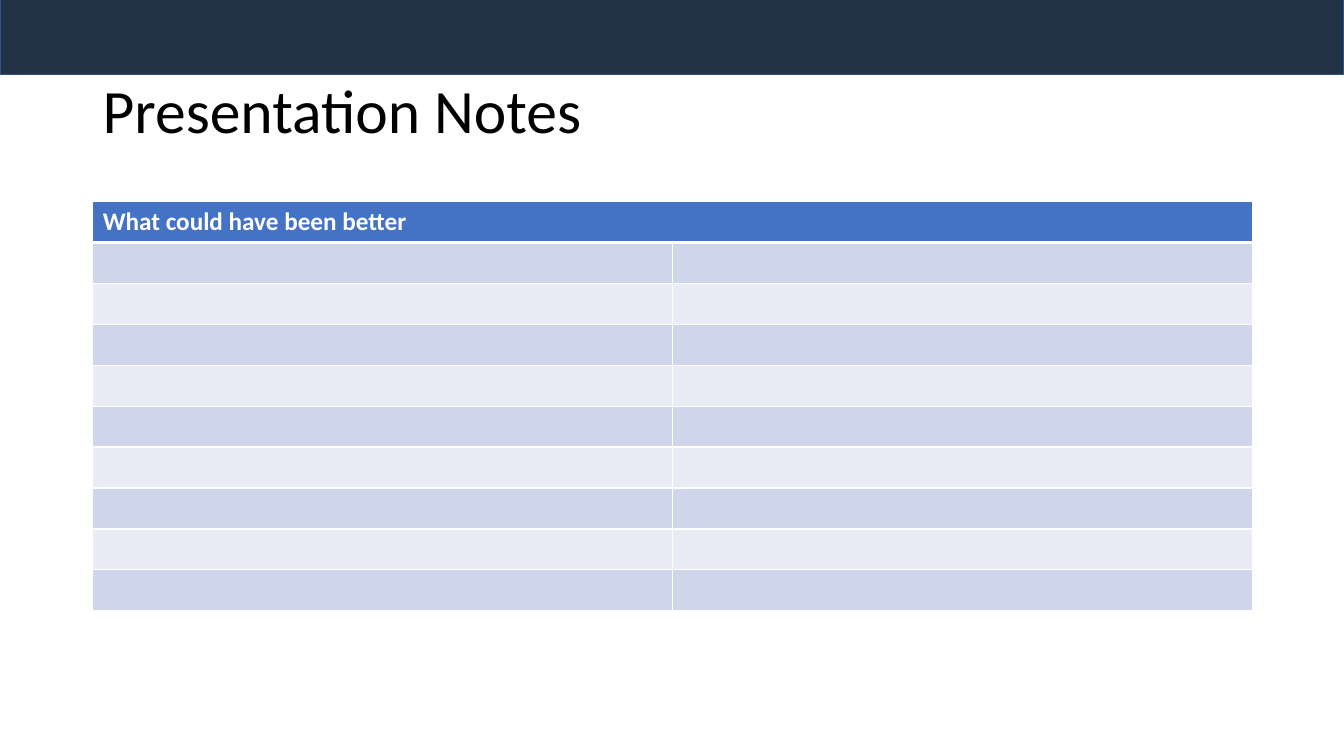
from dataclasses import dataclass

from lxml import etree
from pptx import Presentation
from pptx.dml.color import RGBColor
from pptx.enum.shapes import MSO_SHAPE
from pptx.enum.text import MSO_ANCHOR
from pptx.oxml.ns import qn
from pptx.slide import Slide
from pptx.table import _Cell
from pptx.text.text import TextFrame
from pptx.util import Inches, Pt

RECT = MSO_SHAPE.RECTANGLE
TOP = MSO_ANCHOR.TOP
MIDDLE = MSO_ANCHOR.MIDDLE

BLACK = RGBColor(0x00, 0x00, 0x00)
WHITE = RGBColor(0xFF, 0xFF, 0xFF)
NAVY = RGBColor(0x22, 0x33, 0x46)
EDGE = RGBColor(0x32, 0x54, 0x91)
BLUE = RGBColor(0x44, 0x72, 0xC4)
DARK = RGBColor(0xCF, 0xD5, 0xEA)
PALE = RGBColor(0xE9, 0xEB, 0xF5)

FONT = "Calibri"
WIDE = 13.33
LEFT = 0.92
SPAN = 11.5
COLS = 2
ROWS = 10
DEEP = 4.06


@dataclass(frozen=True)
class Row:
    fill: RGBColor
    above: float = 1
    below: float = 1


def write(frame: TextFrame, text: str, *, size: float, color: RGBColor,
          bold: bool = False, anchor: MSO_ANCHOR = TOP, space: float = 1.0) -> None:
    frame.word_wrap = True
    frame.vertical_anchor = anchor
    line = frame.paragraphs[0]
    line.line_spacing = space
    run = line.add_run()
    run.text = text
    run.font.name = FONT
    run.font.size = Pt(size)
    run.font.bold = bold
    run.font.color.rgb = color


def draw_bar(slide: Slide) -> None:
    bar = slide.shapes.add_shape(
        RECT, Inches(0), Inches(-0.04), Inches(WIDE), Inches(0.78))
    bar.shadow.inherit = False
    bar.fill.solid()
    bar.fill.fore_color.rgb = NAVY
    bar.line.color.rgb = EDGE
    bar.line.width = Pt(1)


def draw_title(slide: Slide) -> None:
    box = slide.shapes.add_textbox(
        Inches(LEFT), Inches(0.4), Inches(SPAN), Inches(1.45))
    write(box.text_frame, "Presentation Notes", size=44, color=BLACK,
          anchor=MIDDLE, space=0.9)


def style_cell(cell: _Cell, row: Row) -> None:
    props = cell._tc.get_or_add_tcPr()
    sides = {"a:lnL": 1, "a:lnR": 1, "a:lnT": row.above, "a:lnB": row.below}
    for tag, width in sides.items():
        edge = etree.SubElement(props, qn(tag), w=str(Pt(width)))
        fill = etree.SubElement(edge, qn("a:solidFill"))
        etree.SubElement(fill, qn("a:srgbClr"), val=str(WHITE))
    cell.fill.solid()
    cell.fill.fore_color.rgb = row.fill


def draw_table(slide: Slide) -> None:
    table = slide.shapes.add_table(
        ROWS, COLS, Inches(LEFT), Inches(2), Inches(SPAN), Inches(DEEP)).table
    for col in table.columns:
        col.width = Inches(SPAN / COLS)
    rows = [Row(BLUE, below=3), Row(DARK, above=3)]
    rows += [Row(DARK if i % 2 else PALE) for i in range(2, ROWS)]
    for i, row in enumerate(rows):
        table.rows[i].height = Inches(DEEP / ROWS)
        for j in range(COLS):
            style_cell(table.cell(i, j), row)
    head = table.cell(0, 0)
    head.merge(table.cell(0, COLS - 1))
    write(head.text_frame, "What could have been better", size=18,
          color=WHITE, bold=True)


def main() -> None:
    deck = Presentation()
    deck.slide_width = Inches(WIDE)
    deck.slide_height = Inches(7.5)
    slide = deck.slides.add_slide(deck.slide_layouts[6])
    draw_bar(slide)
    draw_title(slide)
    draw_table(slide)
    deck.save("out.pptx")


if __name__ == "__main__":
    main()
